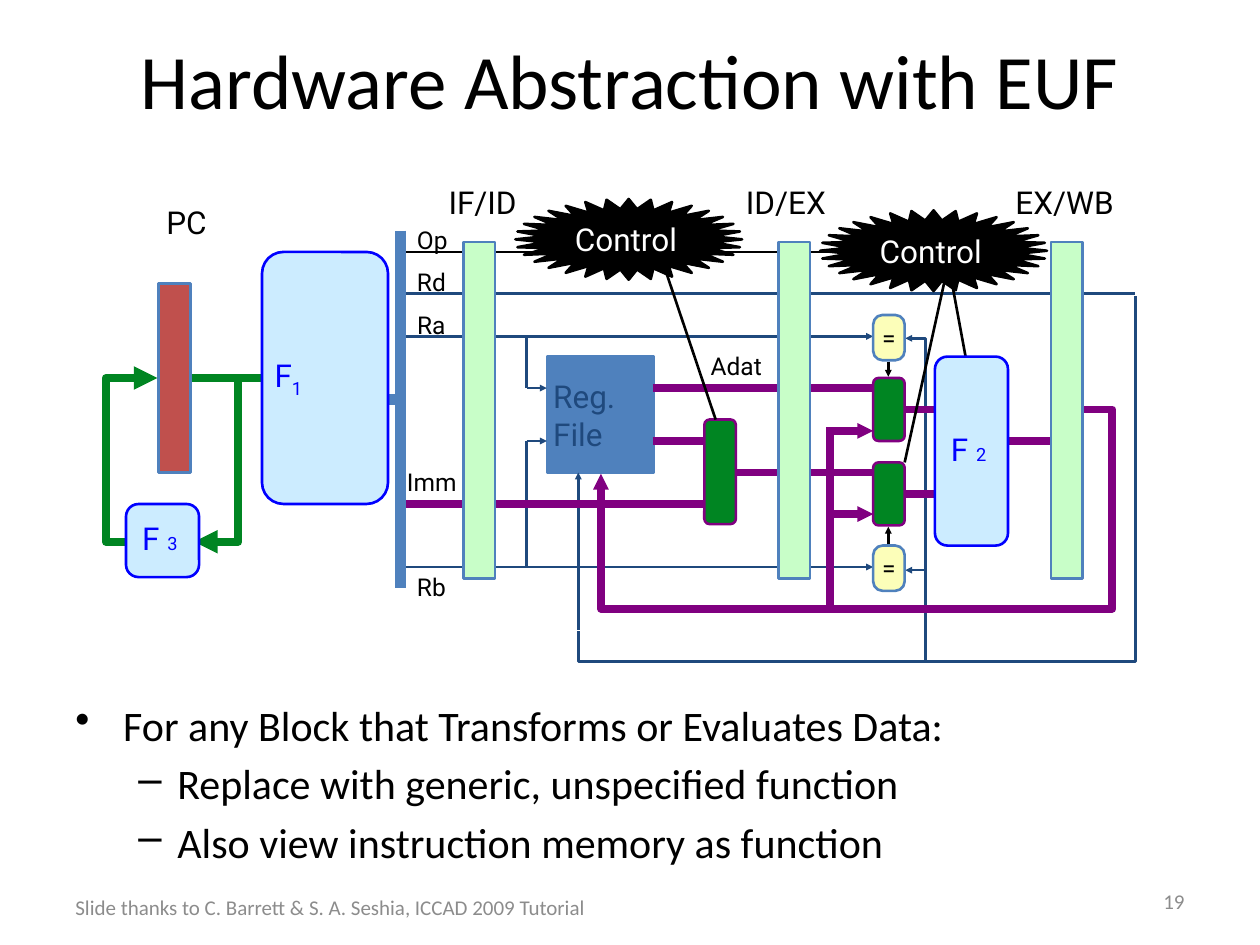
from lxml.etree import SubElement
from pptx import Presentation
from pptx.dml.color import RGBColor
from pptx.enum.shapes import MSO_CONNECTOR as Link, MSO_SHAPE as Kind
from pptx.enum.text import MSO_ANCHOR as Anchor, PP_ALIGN as Align
from pptx.oxml.ns import qn
from pptx.util import Inches, Pt

BLACK = RGBColor(0, 0, 0)
WHITE = RGBColor(255, 255, 255)
GRAY = RGBColor(0x8C, 0x8C, 0x8C)
NAVY = RGBColor(0x1F, 0x49, 0x7D)
STEEL = RGBColor(0x4F, 0x81, 0xBD)
PURPLE = RGBColor(0x80, 0, 0x80)
GREEN = RGBColor(0, 0x85, 0x22)
RED = RGBColor(0xC0, 0x50, 0x4D)
MINT = RGBColor(0xC8, 0xFE, 0xC8)
CREAM = RGBColor(0xFC, 0xFE, 0xB9)
SKY = RGBColor(0xCC, 0xEC, 0xFF)
BLUE = RGBColor(0, 0, 0xFF)

deck = Presentation()
deck.slide_width, deck.slide_height = Inches(10), Inches(7.5)
page = deck.slides.add_slide(deck.slide_layouts[6])


def block(shapes, place, text="", size=18, color=BLACK, font="Roboto", kind=None,
          fill=None, edge=STEEL, round_by=None, inset=0.05, wrap=False, align=Align.LEFT):
    """Add a shape, or a text box when no kind is given, with its text."""
    spot = [Inches(value) for value in place]
    if kind is None:
        box = shapes.add_textbox(*spot)
    else:
        box = shapes.add_shape(kind, *spot)
        box.shadow.inherit = False
        box.fill.solid()
        box.fill.fore_color.rgb = fill
        box.line.color.rgb = edge
        box.line.width = Pt(1.5)
        if round_by:
            box.adjustments[0] = round_by
    frame = box.text_frame
    frame.word_wrap = wrap
    frame.vertical_anchor = Anchor.MIDDLE
    frame.margin_left = frame.margin_right = Inches(inset)
    frame.margin_top = frame.margin_bottom = Inches(0.05)
    if text:
        for index, line in enumerate(text.split("\n")):
            para = frame.add_paragraph() if index else frame.paragraphs[0]
            para.text = line
            para.alignment = align
            para.font.size, para.font.name = Pt(size), font
            para.font.color.rgb = color
    return box


def wire(shapes, ends, color=NAVY, weight=1.5, head=None, bends=(), turn=0, flip=False):
    """Add a connector; head is an arrowhead size, bends are shares of the frame."""
    link = shapes.add_connector(Link.ELBOW if bends else Link.STRAIGHT,
                                *[Inches(value) for value in ends])
    link.line.color.rgb = color
    link.line.width = Pt(weight)
    properties = link.element.spPr
    if bends:
        shape = properties.find(qn("a:prstGeom"))
        # A single bend at 1 is a plain corner
        corner = bends == (1,)
        shape.set("prst", "bentConnector2" if corner else f"bentConnector{len(bends) + 2}")
        guides = shape.find(qn("a:avLst"))
        for number, share in enumerate(() if corner else bends, 1):
            SubElement(guides, qn("a:gd"), name=f"adj{number}",
                       fmla=f"val {round(share * 100000)}")
        frame = properties.find(qn("a:xfrm"))
        frame.set("rot", str(turn * 60000))
        frame.set("flipH", "1" if flip else "0")
    if head:
        SubElement(properties.find(qn("a:ln")), qn("a:tailEnd"),
                   type="triangle", w=head, len=head)
    SubElement(properties, qn("a:effectLst"))


# Title, page number and credit
block(page.shapes, (0.5, 0, 9, 1.25), "Hardware Abstraction with EUF", 44,
      font="Calibri", inset=0.1, wrap=True, align=Align.CENTER)
block(page.shapes, (7.17, 6.95, 2.33, 0.4), "19", 12, GRAY, "Calibri",
      inset=0.1, wrap=True, align=Align.RIGHT)
block(page.shapes, (0.5, 7, 4.5, 0.4),
      "Slide thanks to C. Barrett & S. A. Seshia, ICCAD 2009 Tutorial",
      12, GRAY, "Calibri", inset=0.1, wrap=True)

# Bullets
body = block(page.shapes, (0.5, 5.5, 9, 1.6),
             "For any Block that Transforms or Evaluates Data:\n"
             "Replace with generic, unspecified function\n"
             "Also view instruction memory as function",
             24, font="Calibri", inset=0.1, wrap=True)
body.text_frame.vertical_anchor = Anchor.TOP
for index, para in enumerate(body.text_frame.paragraphs):
    para.level = min(index, 1)
    para.space_before = Pt(4.8)
    margin, hang, mark = (0.81, 0.31, "–") if index else (0.38, 0.38, "•")
    style = body.element.findall(".//" + qn("a:pPr"))[index]
    style.set("marL", str(Inches(margin)))
    style.set("indent", str(-Inches(hang)))
    bullet = style.makeelement(qn("a:buChar"), {"char": mark})
    style.find(qn("a:defRPr")).addprevious(bullet)

pipeline = page.shapes.add_group_shape().shapes

# Register file
block(pipeline, (4.34, 2.83, 0.85, 0.92), "Reg.\nFile", color=NAVY,
      kind=Kind.RECTANGLE, fill=STEEL)

# Thin address wires
for ends, head in [
    ((4.18, 3.08, 4.34, 3.08), "sm"), ((4.18, 3.5, 4.34, 3.5), "sm"),
    ((3.18, 2.33, 9.01, 2.33), None), ((3.18, 2.67, 6.93, 2.67), "sm"),
    ((3.18, 4.5, 6.93, 4.5), "sm"), ((4.59, 5, 4.59, 3.75), "sm"),
    ((4.18, 3.08, 4.18, 2.67), None), ((4.18, 4.5, 4.18, 3.5), None),
]:
    wire(pipeline, ends, head=head)

# Write address returns from the last latch to the register file
wire(pipeline, (5.47, 1.47, 8.13, 5.89), bends=(1.09,), turn=90)
# and branches to both comparators
wire(pipeline, (5.98, 3.89, 8.55, 4.05), head="sm", bends=(1,), turn=90, flip=True)
wire(pipeline, (6.9, 4.81, 7.63, 4.97), head="sm", bends=(1,), turn=90, flip=True)

# Thick data wires
for ends, head in [
    ((3.18, 4, 5.59, 4), None), ((5.18, 3.5, 5.59, 3.5), None),
    ((5.18, 3.08, 6.93, 3.08), None), ((5.84, 3.75, 6.93, 3.75), None),
    ((7.18, 3.92, 7.51, 3.92), None), ((7.18, 3.25, 7.51, 3.25), None),
    ((7.93, 3.5, 8.34, 3.5), None), ((6.59, 3.39, 6.59, 4.83), None),
    ((6.59, 4.08, 6.93, 4.08), "sm"), ((6.59, 3.42, 6.93, 3.42), "sm"),
]:
    wire(pipeline, ends, PURPLE, 4.5, head)
wire(pipeline, (4.77, 3.25, 8.6, 3.76), PURPLE, 4.5, "sm", bends=(-0.06, 3.1), flip=True)

# Program counter loop
block(pipeline, (1.26, 2.25, 0.25, 1.5), kind=Kind.RECTANGLE, fill=RED)
wire(pipeline, (1.68, 3, 2.18, 3), GREEN, 4.5)
wire(pipeline, (1.52, 3, 1.54, 4.3), GREEN, 4.5, "med", bends=(18.5,))
wire(pipeline, (1.08, 3, 1.25, 4.3), GREEN, 4.5, "med", bends=(-1.41,), turn=180, flip=True)

# Operation wire and instruction bus
wire(pipeline, (3.18, 2, 7.09, 2), BLACK)
wire(pipeline, (3.01, 3.17, 3.18, 3.17), STEEL, 6)
wire(pipeline, (3.18, 1.83, 3.18, 4.67), STEEL, 6)

# Multiplexers and comparators
for left, top, height in [(5.59, 3.33, 0.83), (6.93, 3, 0.5), (6.93, 3.67, 0.5)]:
    block(pipeline, (left, top, 0.25, height), kind=Kind.ROUNDED_RECTANGLE,
          fill=GREEN, edge=PURPLE, round_by=0.17)
for top in (2.5, 4.33):
    block(pipeline, (6.93, top, 0.25, 0.36), "=", 14, kind=Kind.ROUNDED_RECTANGLE,
          fill=CREAM, round_by=0.3, wrap=True)
for start, end in [(2.87, 2.99), (4.32, 4.18)]:
    wire(pipeline, (7.05, start, 7.05, end), BLACK, head="sm")

# Pipeline latches
for left in (3.68, 6.18, 8.34):
    block(pipeline, (left, 1.92, 0.25, 2.67), kind=Kind.RECTANGLE, fill=MINT)

# Labels
for text, left, top, width, height, size in [
    ("PC", 1.27, 1.58, 0.5, 0.37, 18), ("IF/ID", 3.51, 1.42, 0.75, 0.37, 18),
    ("ID/EX", 5.87, 1.42, 0.85, 0.37, 18), ("EX/WB", 8.01, 1.42, 1, 0.37, 18),
    ("Op", 3.26, 1.75, 0.37, 0.31, 14), ("Rd", 3.26, 2.08, 0.36, 0.31, 14),
    ("Ra", 3.26, 2.42, 0.35, 0.31, 14), ("Rb", 3.26, 4.5, 0.36, 0.31, 14),
    ("Imm", 3.18, 3.67, 0.5, 0.31, 14), ("Adat", 5.59, 2.75, 0.53, 0.31, 14),
]:
    block(pipeline, (left, top, width, height), text, size)

# Control logic
for ends in [(5.26, 2.08, 5.68, 3.33), (7.51, 2, 7.68, 2.92), (7.51, 2.17, 7.18, 3.67)]:
    wire(pipeline, ends, BLACK)
for left, top in [(4.09, 1.58), (6.51, 1.67)]:
    block(pipeline, (left, top, 1.8, 0.64), "Control", color=WHITE,
          kind=Kind.STAR_32_POINT, fill=BLACK, edge=BLACK, round_by=0.375)

# Uninterpreted functions; the turned ones keep their text upright
for number, place, turned in [
    ("2", (6.96, 3.29, 1.5, 0.58), True),
    ("1", (2.08, 2, 1, 2), False),
    ("3", (1, 4, 0.58, 0.58), True),
]:
    box = block(page.shapes, place, "F", color=BLUE, kind=Kind.ROUNDED_RECTANGLE,
                fill=SKY, edge=BLUE, round_by=0.17, wrap=turned)
    span = box.text_frame.paragraphs[0].add_run()
    span.text = number
    box.element.findall(".//" + qn("a:r"))[-1].get_or_add_rPr().set("baseline", "-25000")
    if turned:
        box.rotation = 270
        box.element.find(".//" + qn("a:bodyPr")).set("vert", "eaVert")

deck.save("out.pptx")
